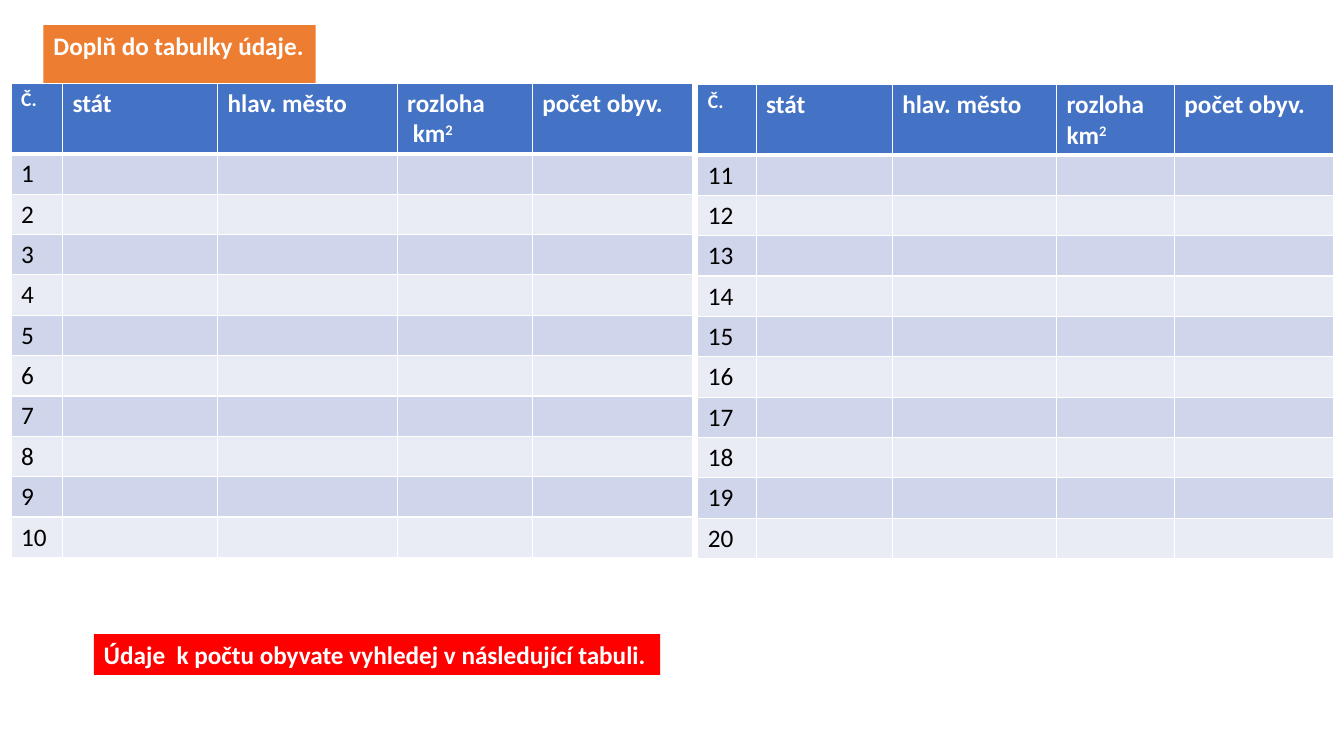
from dataclasses import dataclass

from lxml.etree import SubElement
from pptx import Presentation
from pptx.dml.color import RGBColor as RGB
from pptx.enum.shapes import MSO_SHAPE as SHAPE
from pptx.enum.text import MSO_ANCHOR as ANCHOR, MSO_AUTO_SIZE as AUTO, PP_ALIGN as ALIGN
from pptx.oxml.ns import qn
from pptx.util import Pt


@dataclass(frozen=True)
class Theme:
    font: str = "Calibri"
    body: int = 18
    small: int = 14
    white: str = "FFFFFF"
    black: str = "000000"
    header: str = "4472C4"
    bands: tuple = ("CFD5EA", "E9EBF5")
    orange: str = "ED7D31"
    red: str = "FF0000"


T = Theme()
ROW_H = 27.4
ROWS = 10


def add_text(p, text, size=T.body, color=T.white, bold=True, baseline=None):
    r = p.add_run()
    r.text = text
    f = r.font
    f.name, f.size, f.bold = T.font, Pt(size), bold
    f.color.rgb = RGB.from_string(color)
    if baseline:
        r._r.get_or_add_rPr().set("baseline", str(baseline))


def style_cell(cell, fill, top=1, bottom=1):
    cell.fill.solid()
    cell.fill.fore_color.rgb = RGB.from_string(fill)
    tcPr = cell._tc.get_or_add_tcPr()
    # Borders come before the fill
    for i, (side, width) in enumerate(dict(L=1, R=1, T=top, B=bottom).items()):
        ln = SubElement(tcPr, qn(f"a:ln{side}"), w=str(Pt(width)))
        SubElement(SubElement(ln, qn("a:solidFill")), qn("a:srgbClr"), val=T.white)
        tcPr.insert(i, ln)


def state_table(s, x, y, col_widths, first, unit):
    """Empty table of states, numbered from first."""
    frame = s.shapes.add_table(ROWS + 1, len(col_widths), Pt(x), Pt(y),
                               Pt(sum(col_widths)), Pt(338.4))
    tbl = frame.table
    for col, width in zip(tbl.columns, col_widths):
        col.width = Pt(width)
    for row in tbl.rows:
        row.height = Pt(ROW_H)

    # Header row
    heads = ("Č.", "stát", "hlav. město", "rozloha", "počet obyv.")
    for c, head in enumerate(heads):
        cell = tbl.cell(0, c)
        style_cell(cell, T.header, bottom=3)
        add_text(cell.text_frame.paragraphs[0], head, size=T.body if c else T.small)
    p = tbl.cell(0, 3).text_frame.add_paragraph()
    add_text(p, unit)
    add_text(p, "2", baseline=30000)

    # Numbered rows
    for i in range(ROWS):
        for c in range(len(heads)):
            style_cell(tbl.cell(i + 1, c), T.bands[i % 2], top=1 if i else 3)
        add_text(tbl.cell(i + 1, 0).text_frame.paragraphs[0], str(first + i),
                 color=T.black, bold=False)


def banner(sp, x, y, w, h, text, fill):
    """Filled one-line label."""
    sp.left, sp.top, sp.width, sp.height = Pt(x), Pt(y), Pt(w), Pt(h)
    sp.fill.solid()
    sp.fill.fore_color.rgb = RGB.from_string(fill)
    sp.line.fill.background()
    tf = sp.text_frame
    tf.word_wrap = False
    tf.auto_size = AUTO.SHAPE_TO_FIT_TEXT
    tf.vertical_anchor = ANCHOR.TOP
    p = tf.paragraphs[0]
    p.alignment = ALIGN.LEFT
    add_text(p, text)


def worksheet_slide(prs):
    s = prs.slides.add_slide(prs.slide_layouts[5])
    # Task heading
    banner(s.shapes.title, 31, 18, 194.4, 29.1, "Doplň do tabulky údaje.", T.orange)
    # Two halves of the list
    state_table(s, 7.9, 59.4, (36.7, 110.9, 128.2, 96.5, 114.5), 1, " km")
    state_table(s, 498.5, 60.3, (41.6, 97.2, 117.4, 84.2, 113.8), 11, "km")
    # Hint below the tables
    hint = s.shapes.add_shape(SHAPE.RECTANGLE, 0, 0, 0, 0)
    hint.shadow.inherit = False
    banner(hint, 67, 452.9, 404.6, 29.1,
           "Údaje  k počtu obyvate vyhledej v následující tabuli.", T.red)


def main():
    prs = Presentation()
    prs.slide_width, prs.slide_height = Pt(960), Pt(540)
    worksheet_slide(prs)
    prs.save("out.pptx")


if __name__ == "__main__":
    main()
